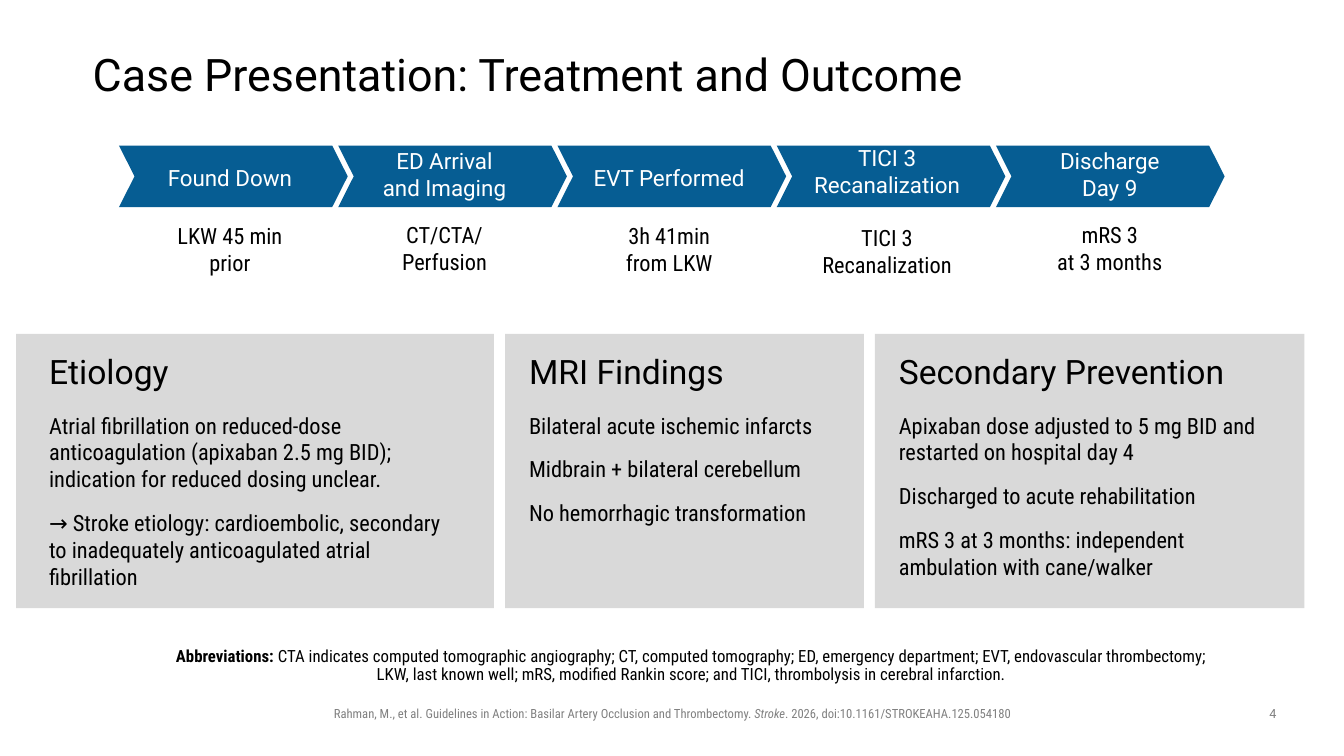
from lxml import etree
from pptx import Presentation
from pptx.dml.color import RGBColor
from pptx.enum import shapes, text
from pptx.oxml import ns
from pptx.util import Pt

SANS, CONDENSED = "Roboto", "Roboto Condensed"
BLACK, WHITE, GREY, BLUE, PANEL = "000000", "FFFFFF", "808080", "065D93", "D9D9D9"

TITLE = "Case Presentation: Treatment and Outcome"
STEPS = [
    (164.2, 113.8, 22, ["Found Down"], ["LKW 45 min", "prior"]),
    (317.5, 101.5, 14.5, ["ED Arrival", "and Imaging"], ["CT/CTA/", "Perfusion"]),
    (478, 113.8, 22, ["EVT Performed"], ["3h 41min", "from LKW"]),
    (633.6, 99.4, 19, ["TICI 3 Recanalization"], ["TICI 3", "Recanalization"]),
    (792.7, 101.5, 14.5, ["Discharge", "Day 9"], ["mRS 3", "at 3 months"]),
]
PANELS = [
    (11.5, 341.3, 28, 307, "Etiology", [
        "Atrial fibrillation on reduced-dose anticoagulation (apixaban 2.5 mg BID); "
        "indication for reduced dosing unclear.",
        "→ Stroke etiology: cardioembolic, secondary to inadequately anticoagulated "
        "atrial fibrillation"]),
    (360.8, 256.3, 370.8, 226, "MRI Findings", [
        "Bilateral acute ischemic infarcts",
        "Midbrain + bilateral cerebellum",
        "No hemorrhagic transformation"]),
    (625, 306.7, 635, 289.5, "Secondary Prevention", [
        "Apixaban dose adjusted to 5 mg BID and restarted on hospital day 4",
        "Discharged to acute rehabilitation",
        "mRS 3 at 3 months: independent ambulation with cane/walker"]),
]
ABBREVIATIONS = [
    ("Abbreviations: ", True, False),
    ("CTA indicates computed tomographic angiography; CT, computed tomography; "
     "ED, emergency department; EVT, endovascular thrombectomy; LKW, last known well; "
     "mRS, modified Rankin score; and TICI, thrombolysis in cerebral infarction.", False, False),
]
CITATION = [
    ("Rahman, M., et al. Guidelines in Action: Basilar Artery Occlusion and Thrombectomy. ", False, False),
    ("Stroke", False, True),
    (". 2026, doi:10.1161/STROKEAHA.125.054180", False, False),
]


def rgb(value):
    return RGBColor.from_string(value)


def style(font, size, name, color):
    font.size, font.name = Pt(size), name
    font.color.rgb = rgb(color)


def place(sp, left, top, width, height):
    sp.left, sp.top, sp.width, sp.height = Pt(left), Pt(top), Pt(width), Pt(height)


def add_block(kind, left, top, width, height, fill):
    sp = s.shapes.add_shape(kind, Pt(left), Pt(top), Pt(width), Pt(height))
    sp.shadow.inherit = False
    sp.fill.solid()
    sp.fill.fore_color.rgb = rgb(fill)
    sp.line.fill.background()
    return sp


def add_text(left, top, width, height, lines):
    tf = s.shapes.add_textbox(Pt(left), Pt(top), Pt(width), Pt(height)).text_frame
    tf.word_wrap = True
    tf.text = "\n".join(lines)
    return tf


def add_runs(p, parts, size, color):
    p.alignment = text.PP_ALIGN.CENTER
    for words, bold, italic in parts:
        r = p.add_run()
        r.text = words
        style(r.font, size, CONDENSED, color)
        r.font.bold, r.font.italic = bold, italic


def add_title():
    sp = s.shapes.title
    place(sp, 66.2, 28.8, 828, 51.8)
    tf = sp.text_frame
    tf.text = TITLE
    tf.auto_size, tf.vertical_anchor = text.MSO_AUTO_SIZE.NONE, text.MSO_ANCHOR.MIDDLE
    tf.margin_left = tf.margin_right = tf.margin_top = tf.margin_bottom = 0
    p = tf.paragraphs[0]
    p.alignment, p.line_spacing = text.PP_ALIGN.LEFT, 0.9
    style(p.runs[0].font, 32, SANS, BLACK)


def add_timeline():
    for i in range(len(STEPS)):
        sp = add_block(shapes.MSO_SHAPE.CHEVRON, 85 + 156.6 * i, 104, 163.4, 44, BLUE)
        sp.adjustments[0] = 0.252
    for center, top, gap, label, caption in STEPS:
        tf = add_text(center - 77, top, 154, 100, label + caption)
        for i, p in enumerate(tf.paragraphs):
            p.alignment = text.PP_ALIGN.CENTER
            in_label = i < len(label)
            style(p.runs[0].font, 16, SANS if in_label else CONDENSED, WHITE if in_label else BLACK)
        tf.paragraphs[len(label)].space_before = Pt(gap)


def add_panels():
    for left, width, text_left, text_width, heading, lines in PANELS:
        add_block(shapes.MSO_SHAPE.RECTANGLE, left, 238.5, width, 196, PANEL)
        tf = add_text(text_left, 247.2, text_width, 180, [heading] + lines)
        for i, p in enumerate(tf.paragraphs):
            p.space_after = Pt(12 if i else 14.5)
            style(p.runs[0].font, 16 if i else 24, CONDENSED if i else SANS, BLACK)


def add_abbreviations():
    sp = s.placeholders[1]
    place(sp, 114.5, 460.8, 766, 31.7)
    tf = sp.text_frame
    tf.auto_size, tf.vertical_anchor = text.MSO_AUTO_SIZE.NONE, text.MSO_ANCHOR.BOTTOM
    tf.margin_left = 0
    p = tf.paragraphs[0]
    pPr = p._p.get_or_add_pPr()
    pPr.set("marL", "0")
    pPr.set("indent", "0")
    etree.SubElement(pPr, ns.qn("a:buNone"))
    p.line_spacing, p.space_before = 0.9, Pt(0)
    add_runs(p, ABBREVIATIONS, 12, BLACK)


def add_footer():
    tf = add_text(170, 500.4, 620.6, 18, [])
    add_runs(tf.paragraphs[0], CITATION, 9, GREY)
    tf = add_text(894.2, 500.4, 30.2, 18.7, ["4"])
    p = tf.paragraphs[0]
    p.alignment = text.PP_ALIGN.CENTER
    style(p.runs[0].font, 9, SANS, GREY)


prs = Presentation()
prs.slide_width, prs.slide_height = Pt(960), Pt(540)
s = prs.slides.add_slide(prs.slide_layouts[1])
add_title()
add_timeline()
add_panels()
add_abbreviations()
add_footer()
prs.save("out.pptx")
